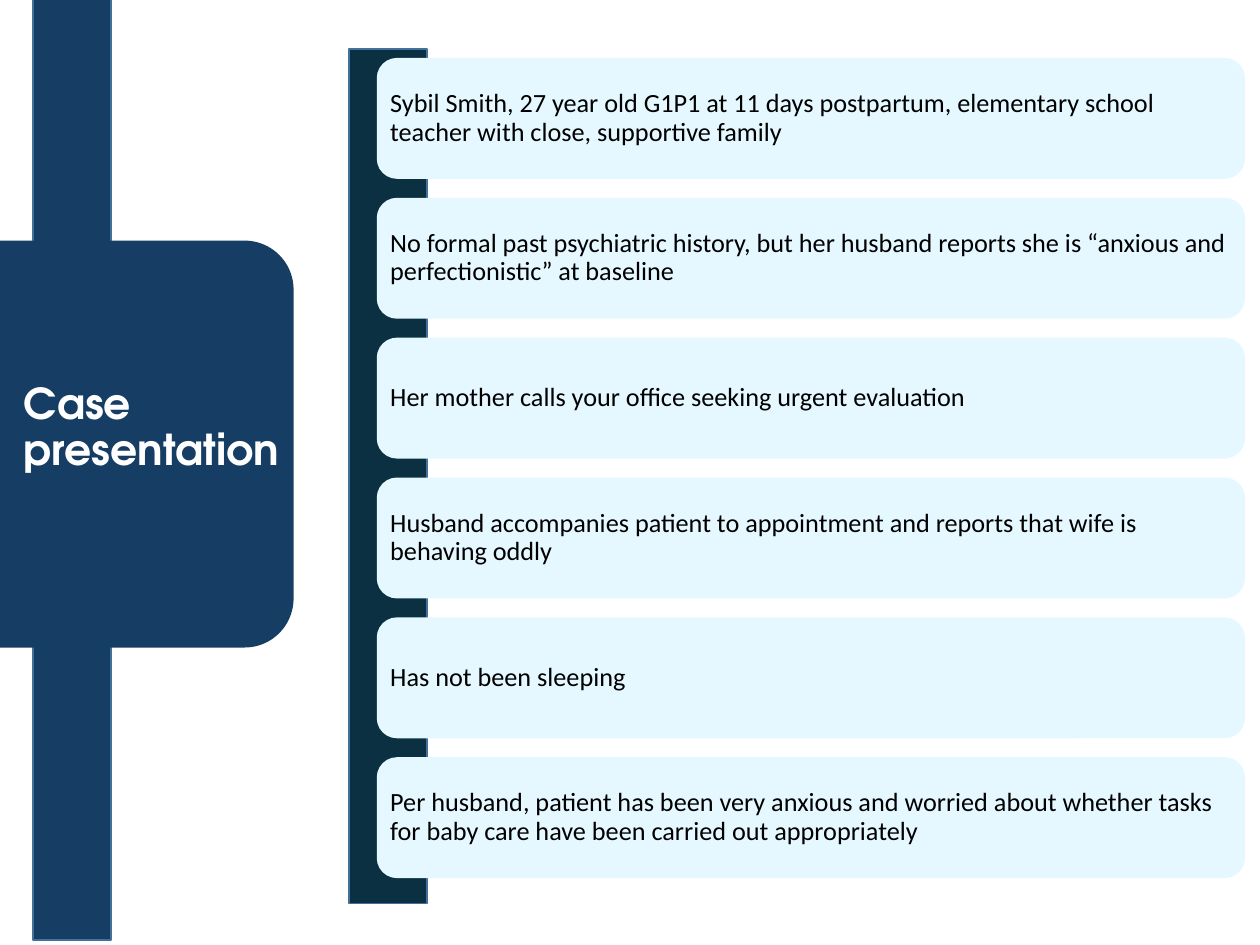
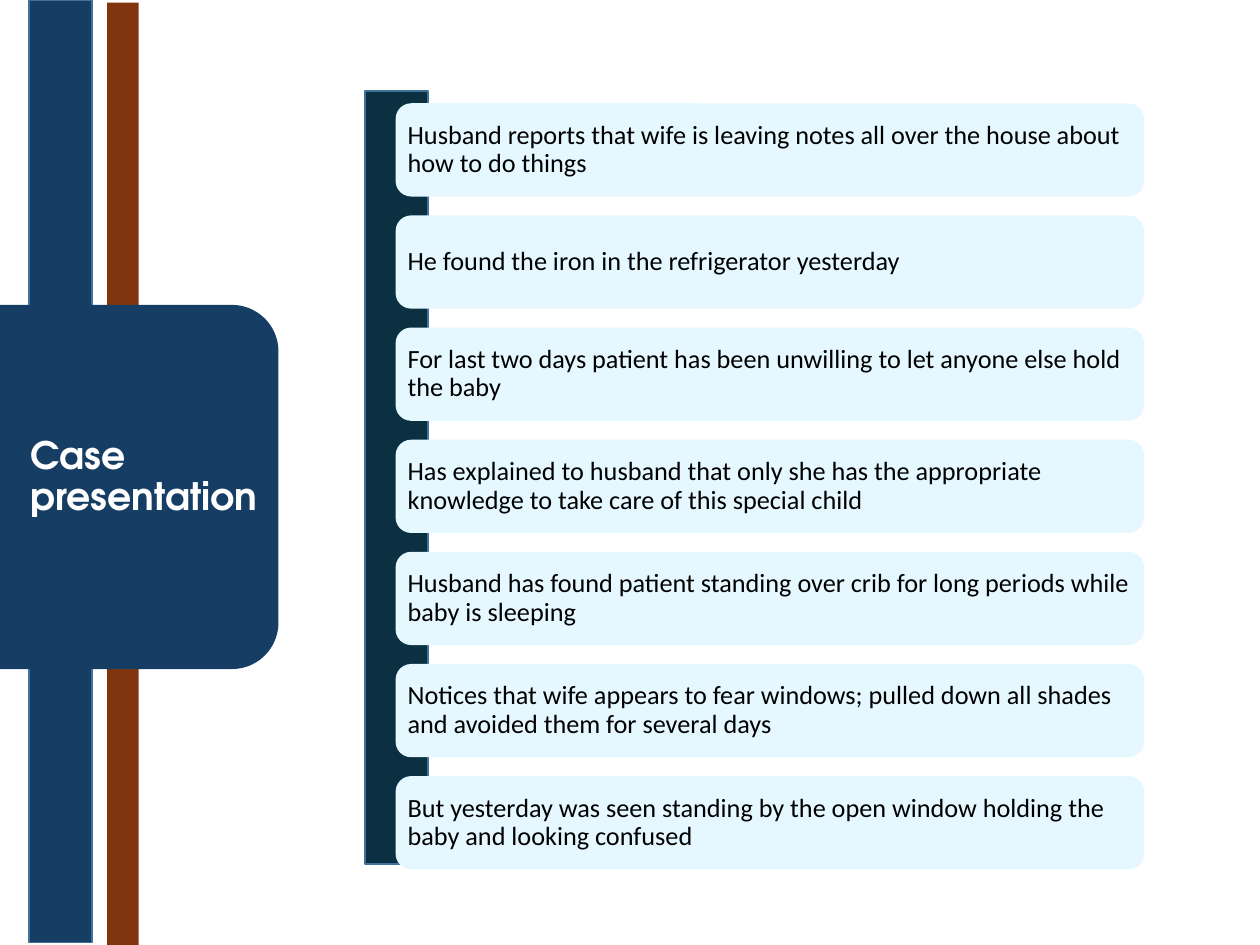
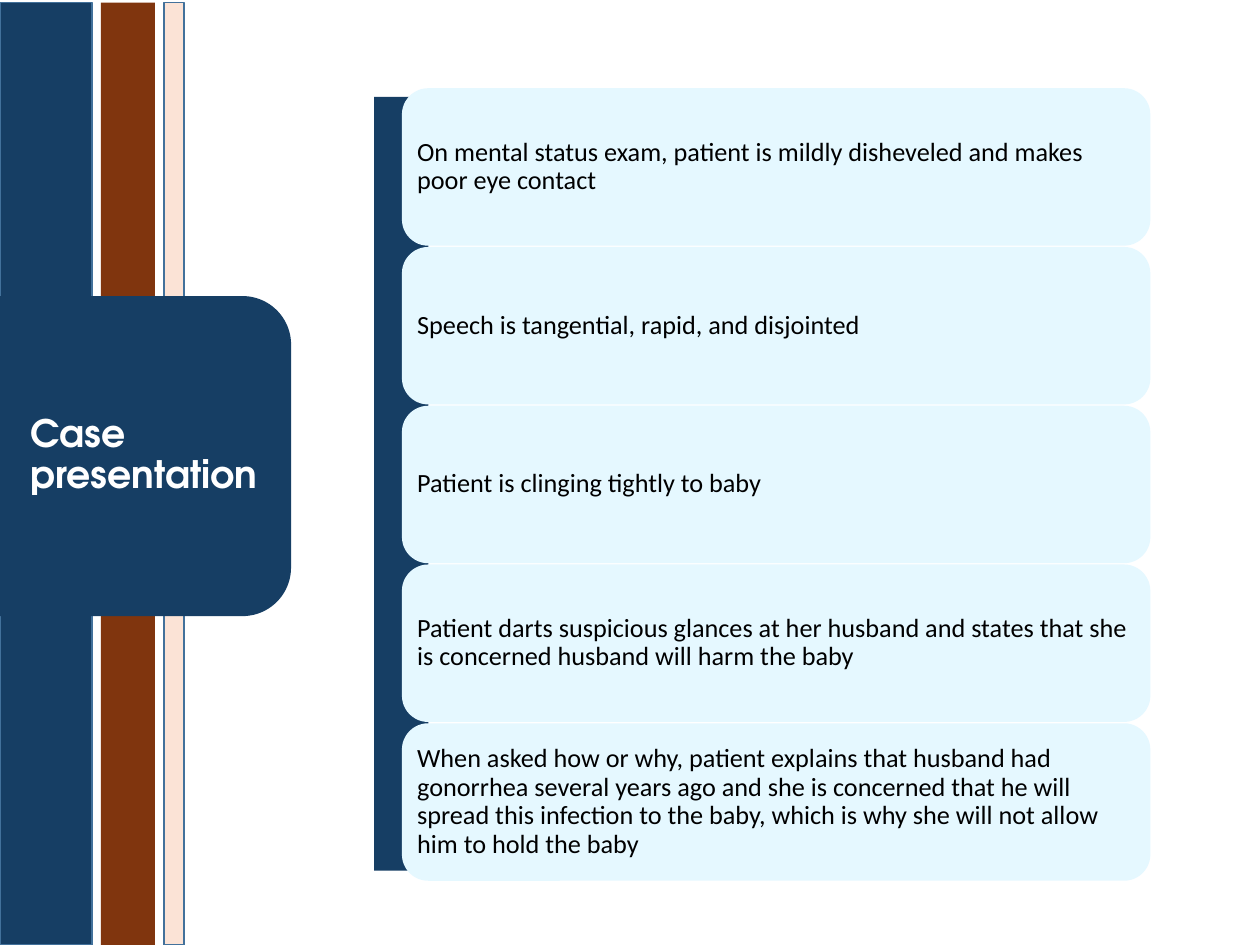
from pptx import Presentation
from pptx import util as u
from pptx.dml.color import RGBColor
from pptx.enum import shapes, text

NAVY, DEEP, BROWN = "163E64", "0B3041", "80350E"
PEACH, ICE, EDGE = "FBE3D6", "E5F8FF", "42719B"
WHITE, BLACK = "FFFFFF", "000000"
TITLE_FONT, BODY_FONT = "TeX Gyre Adventor", "Calibri"
TITLE_LINES = ["Case ", "presentation"]
SHAPE = shapes.MSO_SHAPE


def color(value):
    return RGBColor.from_string(value)


def add_box(slide, kind, box, fill, line=None):
    sp = slide.shapes.add_shape(kind, *map(u.Inches, box))
    sp.shadow.inherit = False
    sp.fill.solid()
    sp.fill.fore_color.rgb = color(fill)
    if line:
        sp.line.color.rgb = color(line)
        sp.line.width = u.Pt(1)
    else:
        sp.line.fill.background()
    return sp


def format_frame(tf, side, top):
    tf.word_wrap = True
    tf.auto_size = text.MSO_AUTO_SIZE.NONE
    tf.vertical_anchor = text.MSO_ANCHOR.MIDDLE
    tf.margin_left = tf.margin_right = u.Inches(side)
    tf.margin_top = tf.margin_bottom = u.Inches(top)
    p = tf.paragraphs[0]
    p.alignment = text.PP_ALIGN.LEFT
    p.line_spacing = 0.9
    return p


def add_run(p, words, font, size, fill, bold=False):
    r = p.add_run()
    r.text = words
    r.font.name = font
    r.font.size = u.Pt(size)
    r.font.bold = bold
    r.font.color.rgb = color(fill)


def add_stripes(slide, stripes):
    for left, top, width, fill, line in stripes:
        add_box(slide, SHAPE.RECTANGLE, (left, top, width, 7.48), fill, line)


def add_tab(slide, box):
    left, top, width, height = box
    shift = (width - height) / 2
    sp = add_box(slide, SHAPE.ROUND_2_SAME_RECTANGLE,
                 (left + shift, top - shift, height, width), NAVY)
    sp.rotation = 90
    sp.adjustments[0] = 0.167
    sp.adjustments[1] = 0


def add_title(slide, left, top, size):
    sp = slide.shapes.title
    sp.left, sp.top, sp.width, sp.height = map(
        u.Inches, (left, top, 3.23, 0.58))
    p = format_frame(sp.text_frame, 0.07, 0.04)
    for i, words in enumerate(TITLE_LINES):
        if i:
            p.add_line_break()
        add_run(p, words, TITLE_FONT, size, WHITE, True)
    slide.shapes._spTree.append(sp._element)


def add_cards(slide, box, step, items):
    left, top, width, height = box
    for i, words in enumerate(items):
        sp = add_box(slide, SHAPE.ROUNDED_RECTANGLE,
                     (left, top + i * step, width, height), ICE)
        sp.adjustments[0] = 0.167
        p = format_frame(sp.text_frame, 0.06, 0.06)
        add_run(p, words, BODY_FONT, 15, BLACK)


def add_case_slide(prs, stripes, tab, title, spine, cards, step, items):
    slide = prs.slides.add_slide(prs.slide_layouts[5])
    spine_box, spine_fill, spine_line = spine
    add_stripes(slide, stripes)
    add_tab(slide, tab)
    add_box(slide, SHAPE.RECTANGLE, spine_box, spine_fill, spine_line)
    add_cards(slide, cards, step, items)
    add_title(slide, *title)


CASE_SLIDES = [
    dict(
        stripes=[(0.26, -0.02, 0.62, NAVY, EDGE)],
        tab=(0, 1.91, 2.33, 3.23),
        title=(0.12, 3.11, 24.3),
        spine=((2.77, 0.39, 0.62, 6.78), DEEP, EDGE),
        cards=(2.99, 0.46, 6.89, 0.96),
        step=1.11,
        items=[
            "Sybil Smith, 27 year old G1P1 at 11 days postpartum, elementary "
            "school teacher with close, supportive family",
            "No formal past psychiatric history, but her husband reports she "
            "is “anxious and perfectionistic” at baseline",
            "Her mother calls your office seeking urgent evaluation",
            "Husband accompanies patient to appointment and reports that wife "
            "is behaving oddly",
            "Has not been sleeping",
            "Per husband, patient has been very anxious and worried about "
            "whether tasks for baby care have been carried out appropriately",
        ],
    ),
    dict(
        stripes=[(0.85, 0.02, 0.25, BROWN, None),
                 (0.23, 0, 0.5, NAVY, EDGE)],
        tab=(0, 2.42, 2.21, 2.89),
        title=(0.17, 3.5, 21.6),
        spine=((2.9, 0.72, 0.5, 6.14), DEEP, EDGE),
        cards=(3.14, 0.82, 5.94, 0.74),
        step=0.89,
        items=[
            "Husband reports that wife is leaving notes all over the house "
            "about how to do things",
            "He found the iron in the refrigerator yesterday",
            "For last two days patient has been unwilling to let anyone else "
            "hold the baby",
            "Has explained to husband that only she has the appropriate "
            "knowledge to take care of this special child",
            "Husband has found patient standing over crib for long periods "
            "while baby is sleeping",
            "Notices that wife appears to fear windows; pulled down all "
            "shades and avoided them for several days",
            "But yesterday was seen standing by the open window holding the "
            "baby and looking confused",
        ],
    ),
    dict(
        stripes=[(1.3, 0.02, 0.16, PEACH, EDGE),
                 (0.8, 0.02, 0.43, BROWN, None),
                 (0, 0.02, 0.73, NAVY, EDGE)],
        tab=(0, 2.35, 2.31, 2.54),
        title=(0.17, 3.33, 21.6),
        spine=((2.97, 0.77, 0.43, 6.14), NAVY, None),
        cards=(3.19, 0.7, 5.94, 1.25),
        step=1.26,
        items=[
            "On mental status exam, patient is mildly disheveled and makes "
            "poor eye contact",
            "Speech is tangential, rapid, and disjointed",
            "Patient is clinging tightly to baby",
            "Patient darts suspicious glances at her husband and states that "
            "she is concerned husband will harm the baby",
            "When asked how or why, patient explains that husband had "
            "gonorrhea several years ago and she is concerned that he will "
            "spread this infection to the baby, which is why she will not "
            "allow him to hold the baby",
        ],
    ),
]


def main():
    prs = Presentation()
    prs.slide_width, prs.slide_height = u.Inches(10), u.Inches(7.5)
    for parts in CASE_SLIDES:
        add_case_slide(prs, **parts)
    prs.save("out.pptx")


if __name__ == "__main__":
    main()
